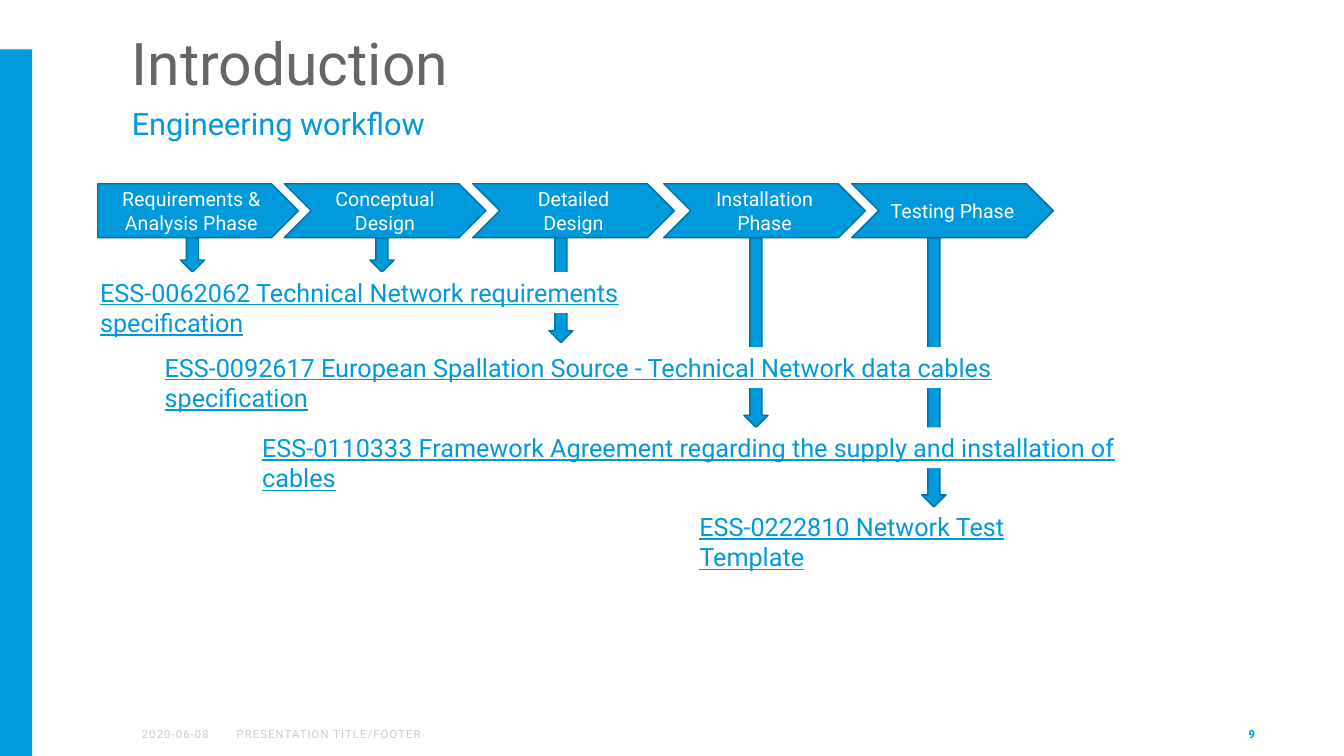
from dataclasses import dataclass

from pptx import Presentation
from pptx import util as u
from pptx.dml.color import RGBColor
from pptx.enum import shapes, text
from pptx.oxml.xmlchemy import OxmlElement

PRESET = shapes.MSO_SHAPE
LEFT, CENTER, RIGHT = text.PP_ALIGN.LEFT, text.PP_ALIGN.CENTER, text.PP_ALIGN.RIGHT
TOP, MIDDLE, BOTTOM = text.MSO_ANCHOR.TOP, text.MSO_ANCHOR.MIDDLE, text.MSO_ANCHOR.BOTTOM

CELL = 0.1  # grid cell in inches; every position below counts cells
SLIDE_COLS, SLIDE_ROWS = 133.33, 75
PHASE_TOP, PHASE_HEIGHT = 18.23, 5.35
ARROW_TOP, ARROW_WIDTH = 23.6, 2.4
MASK_HEIGHT, DOCUMENT_HEIGHT = 4.05, 7.1
FOOTER_TOP, FOOTER_HEIGHT = 70.8, 4


@dataclass(frozen=True)
class Theme:
    font: str = "Roboto"
    accent: str = "0099DC"
    outline: str = "0071A3"
    heading: str = "666666"
    muted: str = "CCCCCC"
    paper: str = "FFFFFF"
    title_size: int = 42
    subtitle_size: int = 22
    document_size: int = 18
    phase_size: int = 14
    footer_size: int = 8


@dataclass(frozen=True)
class Phase:
    label: str
    col: float
    arrow_col: float
    arrow_end: float
    width: float = 20


@dataclass(frozen=True)
class Document:
    label: str
    col: float
    row: float
    width: float
    masks_arrows: bool = True


@dataclass(frozen=True)
class FooterItem:
    label: str
    col: float
    width: float
    color: str
    align: text.PP_ALIGN = LEFT
    bold: bool = False
    tracking: int = 0


THEME = Theme()

PHASES = [
    Phase("Requirements & Analysis Phase", 9.7, 17.9, 27, width=19.9),
    Phase("Conceptual Design", 28.2, 36.7, 27),
    Phase("Detailed Design", 46.9, 54.45, 34),
    Phase("Installation Phase", 65.85, 73.8, 42.4),
    Phase("Testing Phase", 84.5, 91.45, 50.3),
]
DOCUMENTS = [
    Document("ESS-0062062 Technical Network requirements specification", 8.95, 27, 63.2),
    Document("ESS-0092617 European Spallation Source - Technical Network data cables specification",
             15.35, 34.43, 90.9),
    Document("ESS-0110333 Framework Agreement regarding the supply and installation of cables",
             25.03, 42.4, 87.6),
    Document("ESS-0222810 Network Test Template", 68.4, 50.23, 39.4, masks_arrows=False),
]
FOOTER = [
    FooterItem("2020-06-08", 13.1, 9.1, THEME.muted, tracking=80),
    FooterItem("PRESENTATION TITLE/FOOTER", 22.5, 47.2, THEME.muted, tracking=80),
    FooterItem("9", 95.5, 30, THEME.accent, align=RIGHT, bold=True),
]


def cells(count: float) -> int:
    return u.Inches(count * CELL)


def box(col: float, row: float, width: float, height: float) -> tuple:
    return cells(col), cells(row), cells(width), cells(height)


def write(shape, label: str, *, size: int, color: str, align=LEFT, anchor=TOP,
          bold=False, underline=False, tracking=0, line_spacing=1.0,
          inset_top=0.05, inset_bottom=0.05) -> None:
    """Fill a shape with one formatted, unbulleted paragraph."""
    frame = shape.text_frame
    frame.word_wrap = True
    frame.auto_size = text.MSO_AUTO_SIZE.NONE
    frame.vertical_anchor = anchor
    frame.margin_left = frame.margin_right = u.Inches(0.1)
    frame.margin_top, frame.margin_bottom = u.Inches(inset_top), u.Inches(inset_bottom)
    paragraph = frame.paragraphs[0]
    paragraph.alignment = align
    paragraph.line_spacing = line_spacing
    paragraph.space_before = u.Pt(0)
    if shape.is_placeholder:
        properties = paragraph._p.get_or_add_pPr()
        properties.set("marL", "0")
        properties.set("indent", "0")
        properties.append(OxmlElement("a:buNone"))
    run = paragraph.add_run()
    run.text = label
    run.font.name = THEME.font
    run.font.size = u.Pt(size)
    run.font.bold = bold
    run.font.underline = underline
    run.font.color.rgb = RGBColor.from_string(color)
    if tracking:
        run._r.get_or_add_rPr().set("spc", str(tracking))


def add_block(slide, preset, place: tuple, fill: str, outline: str = ""):
    block = slide.shapes.add_shape(preset, *place)
    block.shadow.inherit = False
    block.fill.solid()
    block.fill.fore_color.rgb = RGBColor.from_string(fill)
    if outline:
        block.line.color.rgb = RGBColor.from_string(outline)
        block.line.width = u.Pt(1)
    else:
        block.line.fill.background()
    return block


def add_headings(slide) -> None:
    title, subtitle = slide.shapes.title, slide.placeholders[1]
    for heading, place in ((title, box(12.07, 2.9, 102.4, 7.2)),
                           (subtitle, box(12.07, 10.2, 102.4, 5.5))):
        heading.left, heading.top, heading.width, heading.height = place
    write(title, "Introduction", size=THEME.title_size, color=THEME.heading,
          anchor=BOTTOM, line_spacing=0.9, inset_bottom=0.04)
    write(subtitle, "Engineering workflow", size=THEME.subtitle_size,
          color=THEME.accent, inset_top=0.02)


def add_arrow(slide, phase: Phase) -> None:
    place = box(phase.arrow_col, ARROW_TOP, ARROW_WIDTH, phase.arrow_end - ARROW_TOP)
    add_block(slide, PRESET.DOWN_ARROW, place, THEME.accent, THEME.outline)


def add_phase(slide, phase: Phase, preset) -> None:
    place = box(phase.col, PHASE_TOP, phase.width, PHASE_HEIGHT)
    step = add_block(slide, preset, place, THEME.accent, THEME.outline)
    write(step, phase.label, size=THEME.phase_size, color=THEME.paper,
          align=CENTER, anchor=MIDDLE, inset_top=0.03, inset_bottom=0.03)


def add_document(slide, document: Document) -> None:
    """Add a two-line label; a mask behind its first line interrupts the arrows."""
    if document.masks_arrows:
        mask = box(document.col, document.row, document.width, MASK_HEIGHT)
        add_block(slide, PRESET.RECTANGLE, mask, THEME.paper)
    place = box(document.col, document.row, document.width, DOCUMENT_HEIGHT)
    write(slide.shapes.add_textbox(*place), document.label, size=THEME.document_size,
          color=THEME.accent, underline=True)


def add_footer_item(slide, item: FooterItem) -> None:
    label = slide.shapes.add_textbox(*box(item.col, FOOTER_TOP, item.width, FOOTER_HEIGHT))
    write(label, item.label, size=THEME.footer_size, color=item.color, align=item.align,
          anchor=MIDDLE, bold=item.bold, tracking=item.tracking)


def main() -> None:
    deck = Presentation()
    deck.slide_width, deck.slide_height = cells(SLIDE_COLS), cells(SLIDE_ROWS)
    slide = deck.slides.add_slide(deck.slide_layouts[1])
    add_block(slide, PRESET.RECTANGLE, box(0, 4.9, 3.2, SLIDE_ROWS - 4.9), THEME.accent)
    add_headings(slide)
    for phase in PHASES:
        add_arrow(slide, phase)
    for index, phase in enumerate(PHASES):
        add_phase(slide, phase, PRESET.CHEVRON if index else PRESET.PENTAGON)
    for document in DOCUMENTS:
        add_document(slide, document)
    for item in FOOTER:
        add_footer_item(slide, item)
    deck.save("out.pptx")


if __name__ == "__main__":
    main()
